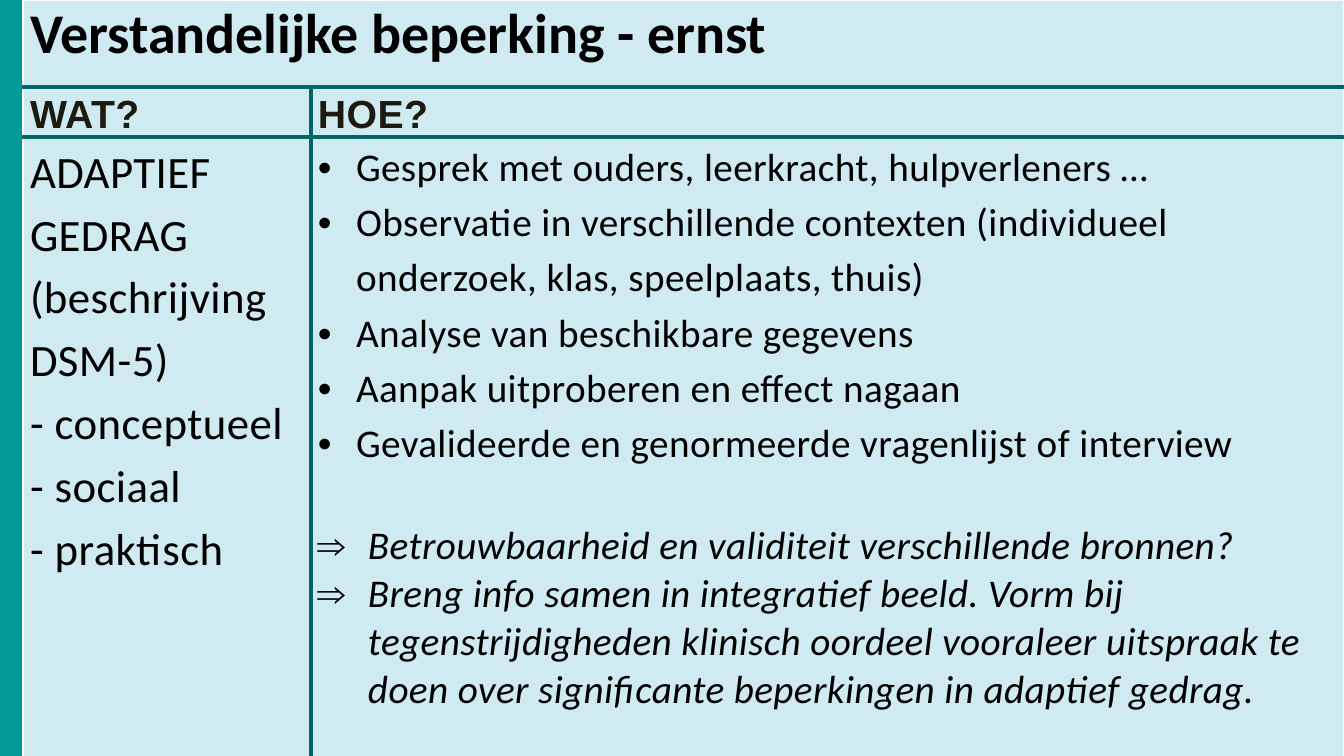
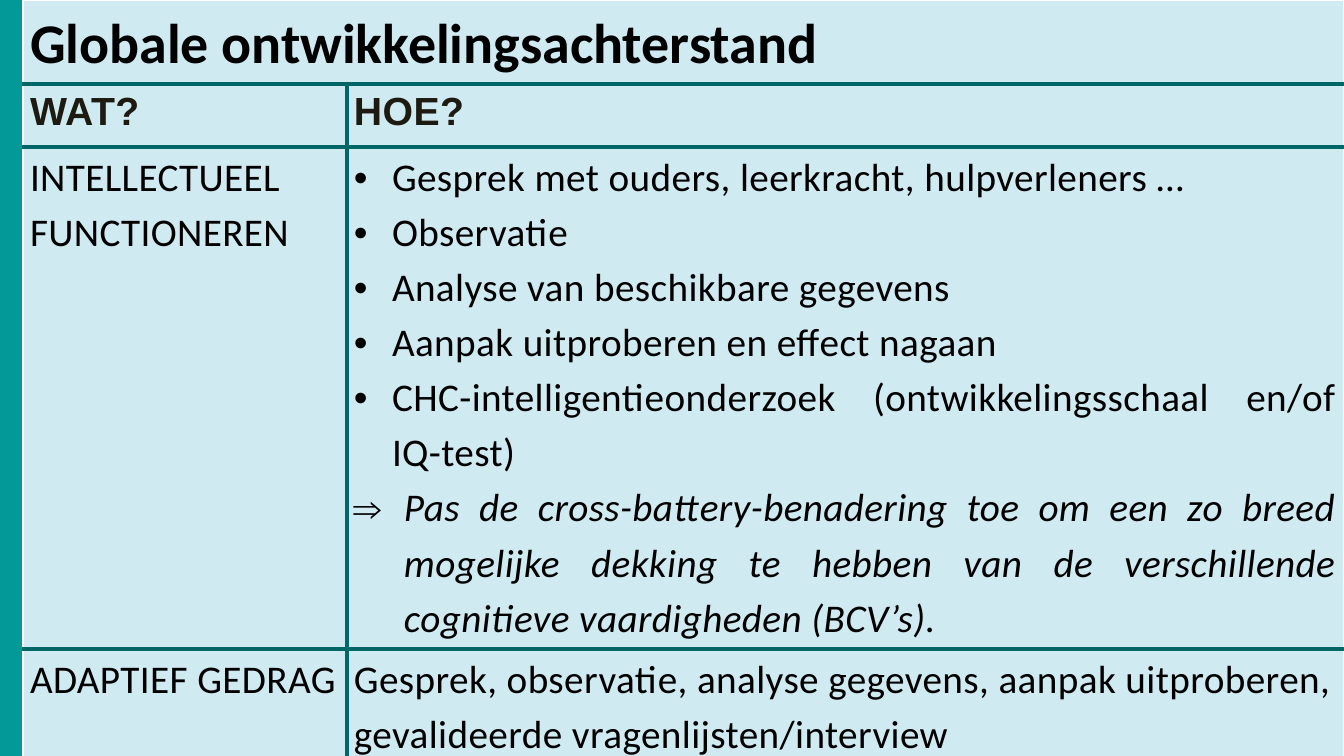
from dataclasses import dataclass

from lxml import etree
from pptx import Presentation
from pptx import util as u
from pptx.dml.color import RGBColor
from pptx.enum import shapes, text
from pptx.oxml import ns

PX = 914400 / 100.8  # EMU in one px
SLIDE_W, SLIDE_H = 1344, 756
BAND_W = 24
TABLE_X = 23
INSET = 7

LEFT, JUSTIFY = text.PP_ALIGN.LEFT, text.PP_ALIGN.JUSTIFY


@dataclass(frozen=True)
class Theme:
    band: str = "049999"
    cell: str = "D0EAF1"
    rule: str = "016666"
    edge: str = "FFFFFF"
    ink: str = "000000"
    head_ink: str = "1D1B11"
    body_font: str = "Calibri"
    head_font: str = "Arial"
    title_size: int = 40
    large_size: int = 32
    body_size: int = 28
    rule_width: int = 3
    edge_width: int = 1
    tracking: int = 30  # hundredths of a point


THEME = Theme()


@dataclass(frozen=True)
class Style:
    size: int = THEME.body_size
    font: str = THEME.body_font
    ink: str = THEME.ink
    bold: bool = False
    italic: bool = False
    tracking: int = THEME.tracking
    align: int = JUSTIFY
    spacing: float = 1.15
    bullet: str = ""
    indent: int = 0
    before: int = 0


HEAD = Style(font=THEME.head_font, ink=THEME.head_ink, bold=True)
TOPIC = Style()
LARGE_TOPIC = Style(size=THEME.large_size)
PLAIN = Style(align=LEFT)


def title_style(spacing):
    return Style(size=THEME.title_size, bold=True, tracking=0, spacing=spacing)


def point(align):
    return Style(bullet="•", indent=38, align=align)


def conclusion(align, spacing, before=0):
    return Style(bullet="⇒", indent=50, italic=True, align=align,
                 spacing=spacing, before=before)


def px(length):
    return u.Emu(round(length * PX))


def sub(parent, tag, **attributes):
    return etree.SubElement(parent, ns.qn(tag), **attributes)


# Text: each cell is a list of (style, wording) pairs
def write_paragraph(paragraph, style, wording):
    paragraph.alignment = style.align
    paragraph.line_spacing = style.spacing
    if style.before:
        paragraph.space_before = u.Pt(style.before)
    if style.bullet:
        properties = paragraph._p.get_or_add_pPr()
        properties.set("marL", str(px(style.indent)))
        properties.set("indent", str(-px(style.indent)))
        sub(properties, "a:buFont", typeface=THEME.head_font)
        sub(properties, "a:buChar", char=style.bullet)
    run = paragraph.add_run()
    run.text = wording
    font = run.font
    font.name, font.size = style.font, u.Pt(style.size)
    font.bold, font.italic = style.bold, style.italic
    font.color.rgb = RGBColor.from_string(style.ink)
    if style.tracking:
        run._r.get_or_add_rPr().set("spc", str(style.tracking))


def write_cell(cell, lines):
    frame = cell.text_frame
    for i, (style, wording) in enumerate(lines):
        paragraph = frame.add_paragraph() if i else frame.paragraphs[0]
        write_paragraph(paragraph, style, wording)


# Cells: light outer edges, dark inner rules
def format_cell(cell, outer_sides):
    cell.margin_left = cell.margin_right = px(INSET)
    cell.margin_top = cell.margin_bottom = 0
    properties = cell._tc.get_or_add_tcPr()
    for side in "LRTB":
        outer = side in outer_sides
        width = THEME.edge_width if outer else THEME.rule_width
        line = sub(properties, f"a:ln{side}", w=str(u.Pt(width)))
        color = THEME.edge if outer else THEME.rule
        sub(sub(line, "a:solidFill"), "a:srgbClr", val=color)
    cell.fill.solid()
    cell.fill.fore_color.rgb = RGBColor.from_string(THEME.cell)


def add_overview(slide, title, topic_width, heights, rows):
    frame = slide.shapes.add_table(
        len(heights), 2, px(TABLE_X), 0, px(SLIDE_W - TABLE_X), px(SLIDE_H))
    table = frame.table
    table.first_row = table.horz_banding = False
    widths = (topic_width, SLIDE_W - TABLE_X - topic_width)
    for column, width in zip(table.columns, widths):
        column.width = px(width)
    for row, height in zip(table.rows, heights):
        row.height = px(height)

    last = len(heights) - 1
    for r in range(len(heights)):
        for c in range(2):
            outer = "LR" if r == 0 else "LR"[c]
            outer += "T" * (r == 0) + "B" * (r == last)
            format_cell(table.cell(r, c), outer)

    table.cell(0, 0).merge(table.cell(0, 1))
    write_cell(table.cell(0, 0), [title])
    headings = ([(HEAD, "WAT?")], [(HEAD, "HOE?")])
    for r, row in enumerate([headings, *rows], start=1):
        for c, lines in enumerate(row):
            write_cell(table.cell(r, c), lines)


# Side band, kept on the master for every slide
def add_master_band(prs, slide):
    band = slide.shapes.add_shape(
        shapes.MSO_SHAPE.RECTANGLE, 0, 0, px(BAND_W), px(SLIDE_H))
    band.shadow.inherit = False
    band.fill.solid()
    band.fill.fore_color.rgb = RGBColor.from_string(THEME.band)
    band.line.fill.background()
    master_shapes = prs.slide_master.shapes
    band.element.nvSpPr.cNvPr.set(
        "id", str(max(shape.shape_id for shape in master_shapes) + 1))
    master_shapes.element.insert(2, band.element)


def build_severity(slide):
    topics = ["ADAPTIEF GEDRAG", "(beschrijving DSM-5)", "- conceptueel",
              "- sociaal", "- praktisch"]
    methods = [
        "Gesprek met ouders, leerkracht, hulpverleners …",
        "Observatie in verschillende contexten (individueel onderzoek, klas, "
        "speelplaats, thuis)",
        "Analyse van beschikbare gegevens",
        "Aanpak uitproberen en effect nagaan",
        "Gevalideerde en genormeerde vragenlijst of interview",
    ]
    conclusions = [
        (conclusion(LEFT, 1.0, before=39),
         "Betrouwbaarheid en validiteit verschillende bronnen?"),
        (conclusion(LEFT, 1.0),
         "Breng info samen in integratief beeld. Vorm bij tegenstrijdigheden "
         "klinisch oordeel vooraleer uitspraak te doen over significante "
         "beperkingen in adaptief gedrag."),
    ]
    add_overview(
        slide, (title_style(1.0), "Verstandelijke beperking - ernst"),
        288, (87, 50, 619),
        [([(LARGE_TOPIC, topic) for topic in topics],
          [(point(LEFT), method) for method in methods] + conclusions)])


def build_delay(slide):
    methods = [
        "Gesprek met ouders, leerkracht, hulpverleners …",
        "Observatie",
        "Analyse van beschikbare gegevens",
        "Aanpak uitproberen en effect nagaan",
        "CHC-intelligentieonderzoek (ontwikkelingsschaal en/of IQ-test)",
    ]
    advice = (conclusion(JUSTIFY, 1.15),
              "Pas de cross-battery-benadering toe om een zo breed mogelijke "
              "dekking te hebben van de verschillende cognitieve vaardigheden "
              "(BCV’s).")
    adaptive = (PLAIN, "Gesprek, observatie, analyse gegevens, aanpak "
                       "uitproberen, gevalideerde vragenlijsten/interview")
    add_overview(
        slide, (title_style(1.15), "Globale ontwikkelingsachterstand"),
        324, (84, 63, 502, 107),
        [([(TOPIC, "INTELLECTUEEL FUNCTIONEREN")],
          [(point(JUSTIFY), method) for method in methods] + [advice]),
         ([(TOPIC, "ADAPTIEF GEDRAG")], [adaptive])])


def main():
    prs = Presentation()
    prs.slide_width, prs.slide_height = px(SLIDE_W), px(SLIDE_H)
    blank = prs.slide_layouts[6]  # the titles are table header cells
    severity, delay = (prs.slides.add_slide(blank) for _ in range(2))
    for slide in (severity, delay):
        for placeholder in list(slide.placeholders):
            placeholder.element.getparent().remove(placeholder.element)
    add_master_band(prs, severity)
    build_severity(severity)
    build_delay(delay)
    prs.save("out.pptx")


if __name__ == "__main__":
    main()
